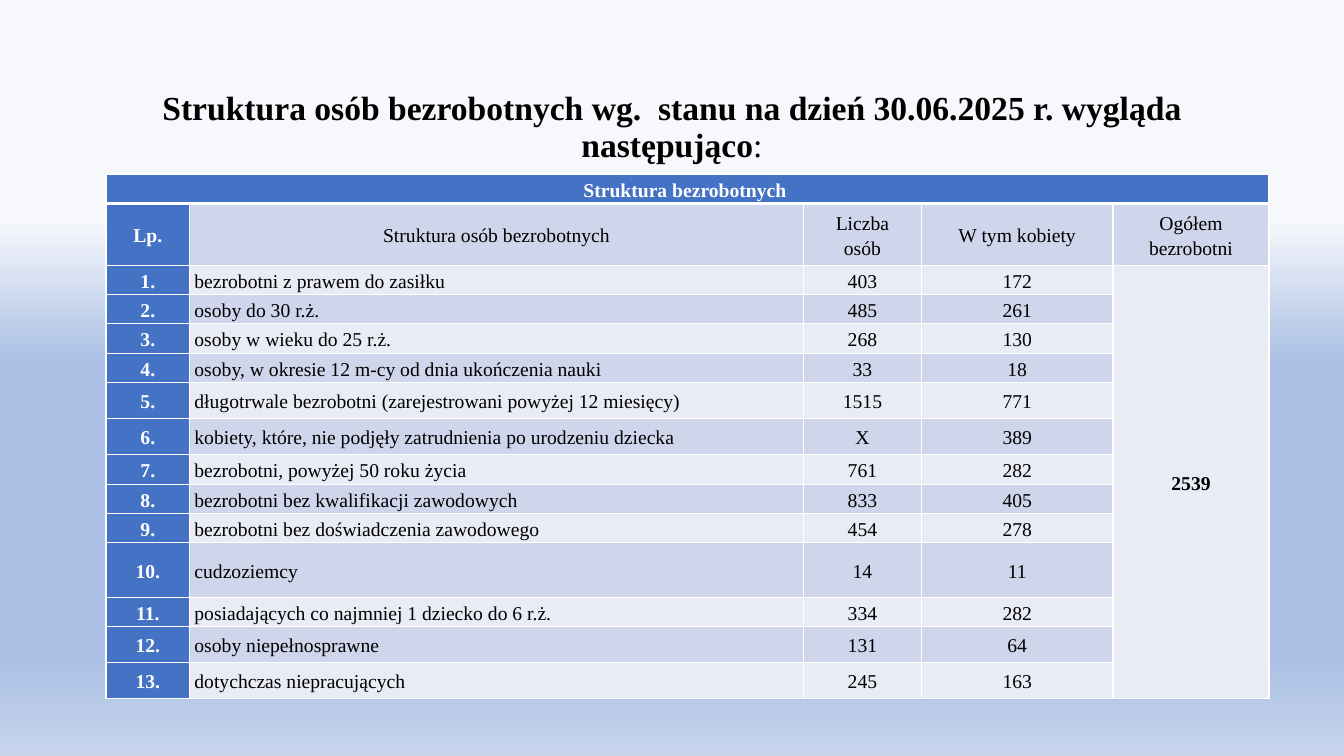
from lxml import etree
from pptx import Presentation
from pptx import util as u
from pptx.dml import color
from pptx.enum import text
from pptx.oxml import ns

COLORS = {
    "header": "4472C4", "dark_band": "CFD5EA", "light_band": "E9EBF5",
    "white": "FFFFFF", "black": "000000",
    "bg_top": "F6F8FC", "bg_mid": "ABC0E4", "bg_bottom": "C7D5ED",
}
HEADINGS = ["Lp.", "Struktura osób bezrobotnych", "Liczba\nosób",
            "W tym kobiety", "Ogółem bezrobotni"]
GROUPS = [
    ("bezrobotni z prawem do zasiłku", "403", "172"),
    ("osoby do 30 r.ż.", "485", "261"),
    ("osoby w wieku do 25 r.ż.", "268", "130"),
    ("osoby, w okresie 12 m-cy od dnia ukończenia nauki", "33", "18"),
    ("długotrwale bezrobotni (zarejestrowani powyżej 12 miesięcy)", "1515", "771"),
    ("kobiety, które, nie podjęły zatrudnienia po urodzeniu dziecka", "X", "389"),
    ("bezrobotni, powyżej 50 roku życia", "761", "282"),
    ("bezrobotni bez kwalifikacji zawodowych", "833", "405"),
    ("bezrobotni bez doświadczenia zawodowego", "454", "278"),
    ("cudzoziemcy", "14", "11"),
    ("posiadających co najmniej 1 dziecko do 6 r.ż.", "334", "282"),
    ("osoby niepełnosprawne", "131", "64"),
    ("dotychczas niepracujących", "245", "163"),
]
TOTAL = "2539"
COL_WIDTHS = [2.11, 15.47, 2.97, 4.83, 3.93]
ROW_HEIGHT = 0.74
TALL_ROWS = {1: 1.55, 6: 0.91, 7: 0.91, 11: 1.37, 13: 0.91, 14: 0.9}


class Deck:
    font = "Times New Roman"

    def __init__(self, width, height):
        self.prs = Presentation()
        self.prs.slide_width, self.prs.slide_height = u.Cm(width), u.Cm(height)
        self.s = self.prs.slides.add_slide(self.prs.slide_layouts[6])

    def background(self, stops):
        fill = self.s.background.fill
        fill.gradient()
        fill.gradient_angle = 270
        gs_list = self.s.element.find(".//" + ns.qn("a:gsLst"))
        for gs in list(gs_list):
            gs_list.remove(gs)
        for percent, name in stops:
            gs = etree.SubElement(gs_list, ns.qn("a:gs"), pos=str(percent * 1000))
            etree.SubElement(gs, ns.qn("a:srgbClr"), val=COLORS[name])

    def run(self, p, content, size, name="black", bold=False):
        r = p.add_run()
        r.text = content
        r.font.name, r.font.size, r.font.bold = self.font, u.Pt(size), bold
        r.font.color.rgb = color.RGBColor.from_string(COLORS[name])

    def title(self, left, top, width, height, parts):
        sp = self.s.shapes.add_textbox(*map(u.Cm, (left, top, width, height)))
        tf = sp.text_frame
        tf.word_wrap = True
        tf.vertical_anchor = text.MSO_ANCHOR.BOTTOM
        tf.margin_bottom = u.Cm(0.56)
        p = tf.paragraphs[0]
        p.alignment, p.line_spacing = text.PP_ALIGN.CENTER, 0.9
        for content, bold in parts:
            self.run(p, content, 24, bold=bold)

    def table(self, left, top, widths, heights):
        frame = self.s.shapes.add_table(
            len(heights), len(widths), u.Cm(left), u.Cm(top),
            u.Cm(sum(widths)), u.Cm(sum(heights)))
        tbl = frame.table
        for col, width in zip(tbl.columns, widths):
            col.width = u.Cm(width)
        for row, height in zip(tbl.rows, heights):
            row.height = u.Cm(height)
        return tbl

    def cell(self, cell, content, fill, name="black", bold=False,
             align=text.PP_ALIGN.CENTER):
        cell.fill.solid()
        cell.fill.fore_color.rgb = color.RGBColor.from_string(COLORS[fill])
        cell.vertical_anchor = text.MSO_ANCHOR.MIDDLE
        cell.margin_left = cell.margin_right = u.Cm(0.12)
        cell.margin_top = cell.margin_bottom = 0
        p = cell.text_frame.paragraphs[0]
        p.alignment, p.line_spacing = align, 1.15
        for i, line in enumerate(content.split("\n")):
            if i:
                p.add_line_break()
            self.run(p, line, 14, name, bold)

    def borders(self, cell, top=1, bottom=1):
        tc_pr = cell._tc.get_or_add_tcPr()
        sides = {"lnL": 1, "lnR": 1, "lnT": top, "lnB": bottom}
        for i, (side, width) in enumerate(sides.items()):
            ln = etree.Element(ns.qn("a:" + side), w=str(u.Pt(width)))
            solid = etree.SubElement(ln, ns.qn("a:solidFill"))
            etree.SubElement(solid, ns.qn("a:srgbClr"), val=COLORS["white"])
            tc_pr.insert(i, ln)


def main():
    deck = Deck(33.87, 19.05)
    deck.background([(29, "bg_top"), (48, "bg_mid"), (87, "bg_mid"), (100, "bg_bottom")])
    deck.title(2.33, 1.02, 29.21, 3.68, [
        ("Struktura osób bezrobotnych wg.  stanu na dzień 30.06.2025 r. wygląda następująco", True),
        (":", False)])

    heights = [TALL_ROWS.get(i, ROW_HEIGHT) for i in range(len(GROUPS) + 2)]
    tbl = deck.table(2.67, 4.39, COL_WIDTHS, heights)
    last_row, last_col = len(heights) - 1, len(COL_WIDTHS) - 1
    tbl.cell(0, 0).merge(tbl.cell(0, last_col))
    tbl.cell(2, last_col).merge(tbl.cell(last_row, last_col))

    deck.cell(tbl.cell(0, 0), "Struktura bezrobotnych ", "header", "white", True)
    deck.cell(tbl.cell(1, 0), HEADINGS[0], "header", "white", True)
    for col, heading in enumerate(HEADINGS[1:], 1):
        deck.cell(tbl.cell(1, col), heading, "dark_band")
    for number, (group, *counts) in enumerate(GROUPS, 1):
        row = number + 1
        band = "light_band" if number % 2 else "dark_band"
        deck.cell(tbl.cell(row, 0), f"{number}.", "header", "white", True)
        deck.cell(tbl.cell(row, 1), group, band, align=text.PP_ALIGN.LEFT)
        for col, count in enumerate(counts, 2):
            deck.cell(tbl.cell(row, col), count, band)
    deck.cell(tbl.cell(2, last_col), TOTAL, "light_band", bold=True)

    for row in range(len(heights)):
        for col in range(len(COL_WIDTHS)):
            deck.borders(tbl.cell(row, col), top=3 if row == 1 else 1,
                         bottom=3 if row == 0 else 1)
    deck.prs.save("out.pptx")


if __name__ == "__main__":
    main()
